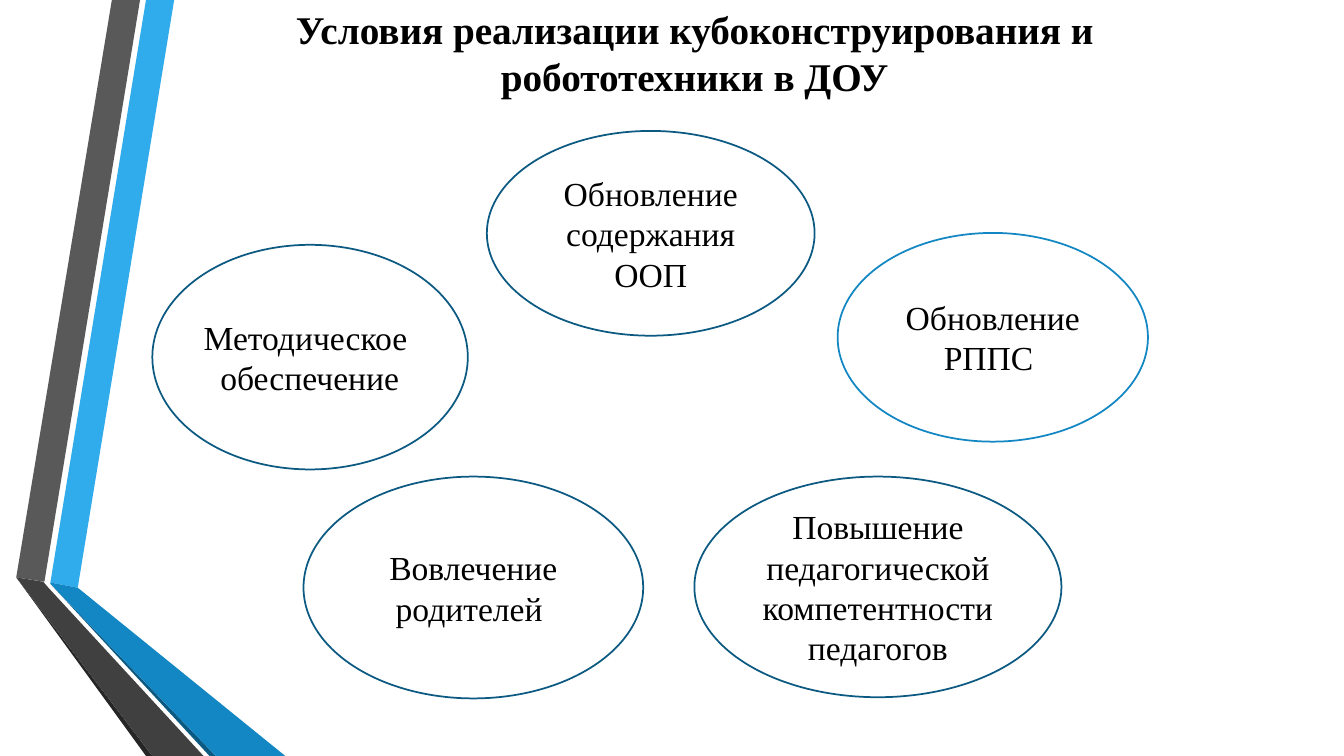
"""Build a slide with five conditions for teaching construction and robotics in a kindergarten."""
from pptx import Presentation
from pptx.dml.color import RGBColor
from pptx.enum.shapes import MSO_SHAPE as Shape
from pptx.enum.text import MSO_ANCHOR as Anchor, PP_ALIGN as Align
from pptx.util import Cm, Pt

FONT = "Times New Roman"
BLACK, WHITE = "000000", "FFFFFF"
NAVY, BLUE = "0C5A82", "1287C3"
WIDTH, HEIGHT = 33.87, 19.05

RIBBONS = [
    ("30ACEC", [(1.27, 14.68), (1.96, 14.81), (4.39, 0), (3.68, 0)]),
    ("595959", [(3.53, 0), (2.82, 0), (0.41, 14.55), (1.12, 14.66)]),
    ("262626", [(0.41, 14.55), (3.68, HEIGHT), (3.84, HEIGHT)]),
    (NAVY, [(1.27, 14.71), (5.28, HEIGHT), (5.44, HEIGHT)]),
    (BLUE, [(1.27, 14.71), (5.44, HEIGHT), (7.19, HEIGHT), (1.96, 14.81), (1.27, 14.68)]),
    ("404040", [(5.13, HEIGHT), (1.22, 14.81), (1.09, 14.66), (0.41, 14.55), (3.84, HEIGHT)]),
]

CONDITIONS = [
    ((12.27, 3.3, 8.26, 5.16), NAVY, "Обновление содержания ООП"),
    ((21.11, 5.87, 7.82, 5.26), BLUE, "Обновление\nРППС "),
    ((3.84, 6.17, 7.95, 5.66), NAVY, ""),
    ((7.65, 12.01, 8.56, 5.59), NAVY, "Вовлечение родителей "),
    ((17.5, 12.01, 9.25, 5.56), NAVY, "Повышение\nпедагогической компетентности\nпедагогов"),
]


def color(value):
    return RGBColor.from_string(value)


def paint(shape, fill):
    shape.shadow.inherit = False
    shape.fill.solid()
    shape.fill.fore_color.rgb = color(fill)


def write(shape, text, size, anchor, bold=False):
    frame = shape.text_frame
    frame.text = text
    frame.word_wrap = True
    frame.vertical_anchor = anchor
    for paragraph in frame.paragraphs:
        paragraph.alignment = Align.CENTER
        paragraph.line_spacing = 1.0
        paragraph.space_before = Pt(0)
        for run in paragraph.runs:
            run.font.name = FONT
            run.font.size = Pt(size)
            run.font.bold = bold
            run.font.color.rgb = color(BLACK)


def add_ribbon(slide, fill, points):
    corners = [(Cm(x), Cm(y)) for x, y in points]
    builder = slide.shapes.build_freeform(*corners[0])
    builder.add_line_segments(corners[1:], close=True)
    shape = builder.convert_to_shape()
    paint(shape, fill)
    shape.line.fill.background()


def add_title(slide, box, text):
    title = slide.shapes.title
    title.left, title.top, title.width, title.height = map(Cm, box)
    write(title, text, 28, Anchor.TOP, bold=True)


def add_oval(slide, box, outline, text):
    oval = slide.shapes.add_shape(Shape.OVAL, *map(Cm, box))
    paint(oval, WHITE)
    oval.line.color.rgb = color(outline)
    oval.line.width = Pt(1.25)
    if text:
        write(oval, text, 24, Anchor.MIDDLE)


def add_label(slide, box, text):
    label = slide.shapes.add_textbox(*map(Cm, box))
    write(label, text, 24, Anchor.TOP)


def main():
    presentation = Presentation()
    presentation.slide_width = Cm(WIDTH)
    presentation.slide_height = Cm(HEIGHT)
    slide = presentation.slides.add_slide(presentation.slide_layouts[5])
    for fill, points in RIBBONS:
        add_ribbon(slide, fill, points)
    add_title(slide, (6.86, 0, 21.29, 2.64), "Условия реализации кубоконструирования и робототехники в ДОУ")
    for box, outline, text in CONDITIONS:
        add_oval(slide, box, outline, text)
    add_label(slide, (4.78, 7.85, 6.05, 2.31), "Методическое \nобеспечение")
    presentation.save("out.pptx")


if __name__ == "__main__":
    main()
